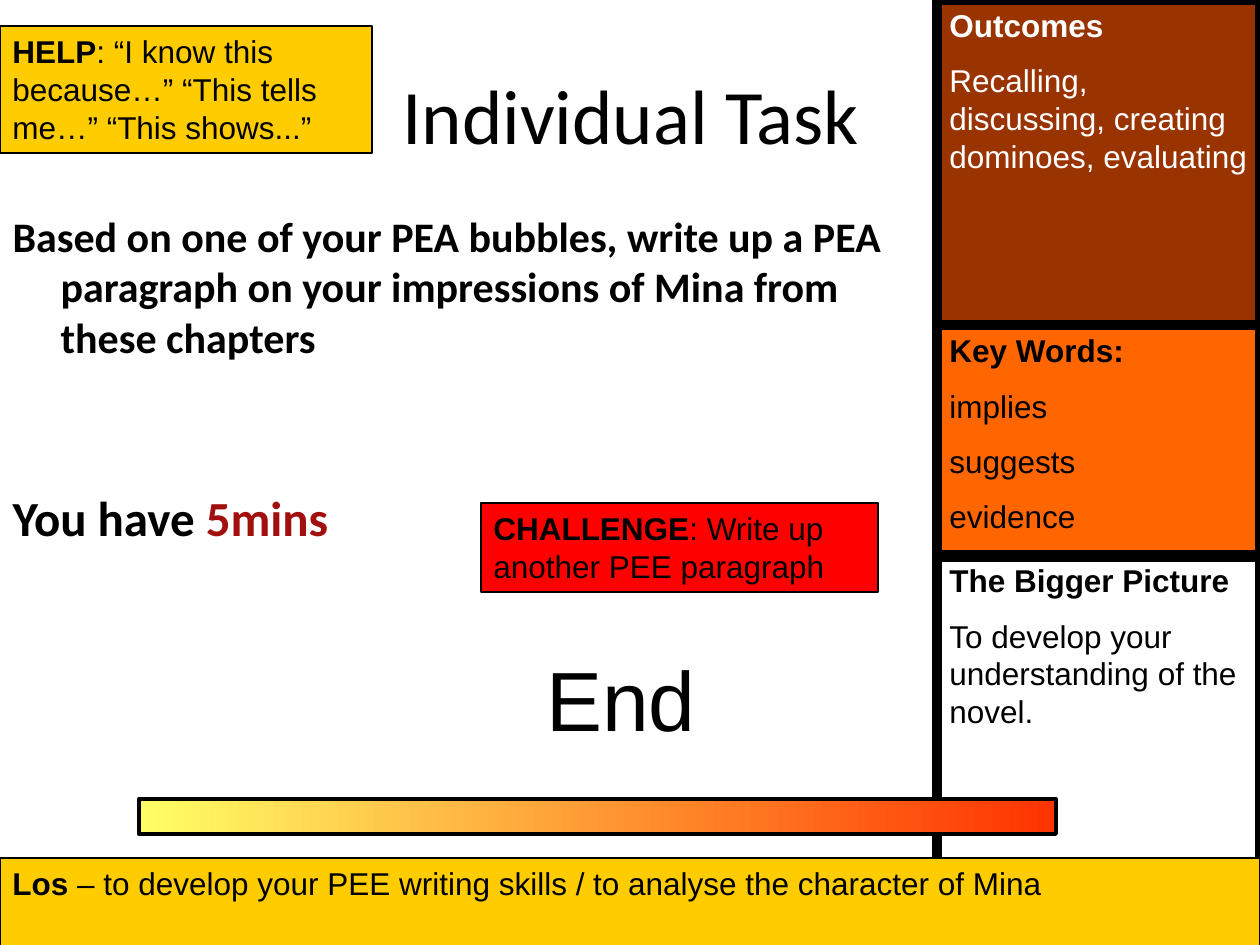
from dataclasses import dataclass

from lxml import etree
from pptx import Presentation
from pptx.dml.color import RGBColor
from pptx.enum.shapes import MSO_SHAPE
from pptx.enum.text import MSO_ANCHOR, MSO_AUTO_SIZE, PP_ALIGN
from pptx.oxml.ns import qn
from pptx.util import Pt

RECTANGLE = MSO_SHAPE.RECTANGLE
TOP, MIDDLE = MSO_ANCHOR.TOP, MSO_ANCHOR.MIDDLE
LEFT, CENTER = PP_ALIGN.LEFT, PP_ALIGN.CENTER
NO_AUTOFIT = MSO_AUTO_SIZE.NONE
PX = 914400 / 126


def emu(px):
    return round(px * PX)


@dataclass(frozen=True)
class Theme:
    black: str = "000000"
    white: str = "FFFFFF"
    brown: str = "993300"
    orange: str = "FF6600"
    gold: str = "FFCC00"
    red: str = "FF0000"
    crimson: str = "A10F0F"
    bar_start: str = "FFFF66"
    bar_end: str = "FF3300"
    box_font: str = "Arial"
    main_font: str = "Calibri"
    box_size: int = 18
    task_size: int = 24
    time_size: int = 28
    title_size: int = 44
    end_size: int = 48
    box_gap: int = 10
    thin: float = 0.75
    medium: float = 2.25
    thick: int = 6


class SlideBuilder:
    def __init__(self, page, theme):
        self.page = page
        self.theme = theme

    def place(self, shape, area):
        shape.left, shape.top, shape.width, shape.height = map(emu, area)

    def add_span(self, para, text, size, font, color, bold=False):
        span = para.add_run()
        span.text = text
        span.font.size = Pt(size)
        span.font.name = font
        span.font.bold = bold
        span.font.color.rgb = RGBColor.from_string(color)

    def next_para(self, frame, index):
        return frame.add_paragraph() if index else frame.paragraphs[0]

    def rectangle(self, area, fill=None, line=None):
        box = self.page.shapes.add_shape(RECTANGLE, *map(emu, area))
        box.shadow.inherit = False
        if fill:
            box.fill.solid()
            box.fill.fore_color.rgb = RGBColor.from_string(fill)
        else:
            box.fill.background()
        if line:
            box.line.width = Pt(line)
            box.line.color.rgb = RGBColor.from_string(self.theme.black)
        else:
            box.line.fill.background()
        return box

    def text_box(self, area, paras, fill, line, color=None):
        theme = self.theme
        frame = self.rectangle(area, fill, line).text_frame
        frame.word_wrap = True
        frame.vertical_anchor = TOP
        for index, spans in enumerate(paras):
            para = self.next_para(frame, index)
            para.alignment = LEFT
            para.space_before = Pt(theme.box_gap if index else 0)
            for text, bold in spans:
                self.add_span(para, text, theme.box_size, theme.box_font, color or theme.black, bold)

    def panel(self, area, heading, lines, fill, color=None):
        paras = [[(heading, True)]] + [[(line, False)] for line in lines]
        self.text_box(area, paras, fill, self.theme.thick, color)

    def callout(self, area, label, text, fill):
        self.text_box(area, [[(label, True), (text, False)]], fill, self.theme.thin)

    def title(self, area, text):
        theme = self.theme
        title = self.page.shapes.title
        self.place(title, area)
        frame = title.text_frame
        frame.auto_size = NO_AUTOFIT
        frame.vertical_anchor = MIDDLE
        para = frame.paragraphs[0]
        para.alignment = CENTER
        self.add_span(para, text, theme.title_size, theme.main_font, theme.black)

    def body(self, area, paras, indent):
        theme = self.theme
        body = self.page.placeholders[1]
        self.place(body, area)
        frame = body.text_frame
        frame.auto_size = NO_AUTOFIT
        for index, (gap, size, spans) in enumerate(paras):
            para = self.next_para(frame, index)
            para.space_before = Pt(gap)
            properties = para._p.get_or_add_pPr()
            properties.set("marL", str(emu(indent)))
            properties.set("indent", str(-emu(indent)))
            etree.SubElement(properties, qn("a:buNone"))
            for text, color in spans:
                self.add_span(para, text, size, theme.main_font, color, True)

    def timer_bar(self, area):
        theme = self.theme
        bar = self.rectangle(area)
        bar.fill.gradient()
        bar.fill.gradient_angle = 0
        ends = ((0, theme.bar_start), (1, theme.bar_end))
        for stop, (position, color) in zip(bar.fill.gradient_stops, ends):
            stop.position = position
            stop.color.rgb = RGBColor.from_string(color)
        self.rectangle(area, line=theme.medium)

    def label(self, area, text):
        theme = self.theme
        frame = self.page.shapes.add_textbox(*map(emu, area)).text_frame
        frame.word_wrap = False
        self.add_span(frame.paragraphs[0], text, theme.end_size, theme.box_font, theme.black)


def main():
    theme = Theme()
    deck = Presentation()
    deck.slide_width, deck.slide_height = emu(1260), emu(945)
    page = deck.slides.add_slide(deck.slide_layouts[1])
    slide = SlideBuilder(page, theme)

    panel_left, panel_width = 937, 323
    slide.panel((panel_left, 0, panel_width, 402), "Outcomes",
                ["Recalling, discussing, creating dominoes, evaluating"],
                theme.brown, theme.white)
    slide.panel((panel_left, 325, panel_width, 232), "Key Words:",
                ["implies", "suggests", "evidence"], theme.orange)
    slide.panel((panel_left, 555, panel_width, 421), "The Bigger Picture",
                ["To develop your understanding of the novel."], None)

    slide.callout((0, 858, 1260, 108), "Los",
                  " – to develop your PEE writing skills / to analyse the character of Mina",
                  theme.gold)
    slide.callout((481, 503, 397, 89), "CHALLENGE",
                  ": Write up another PEE paragraph", theme.red)
    slide.callout((0, 26, 372, 127), "HELP",
                  ": “I know this because…” “This tells me…” “This shows...”", theme.gold)

    slide.title((64, 35, 1134, 158), "Individual Task")
    slide.timer_bar((139, 799, 917, 35))
    slide.label((534, 641, 175, 113), "End")
    slide.body((0, 204, 900, 624), [
        (0, theme.task_size, [
            ("Based on one of your PEA bubbles, write up a PEA paragraph on your "
             "impressions of Mina from these chapters", theme.black)]),
        (72, theme.time_size, [("You have ", theme.black), ("5mins", theme.crimson)]),
    ], indent=48)

    deck.save("out.pptx")


if __name__ == "__main__":
    main()
